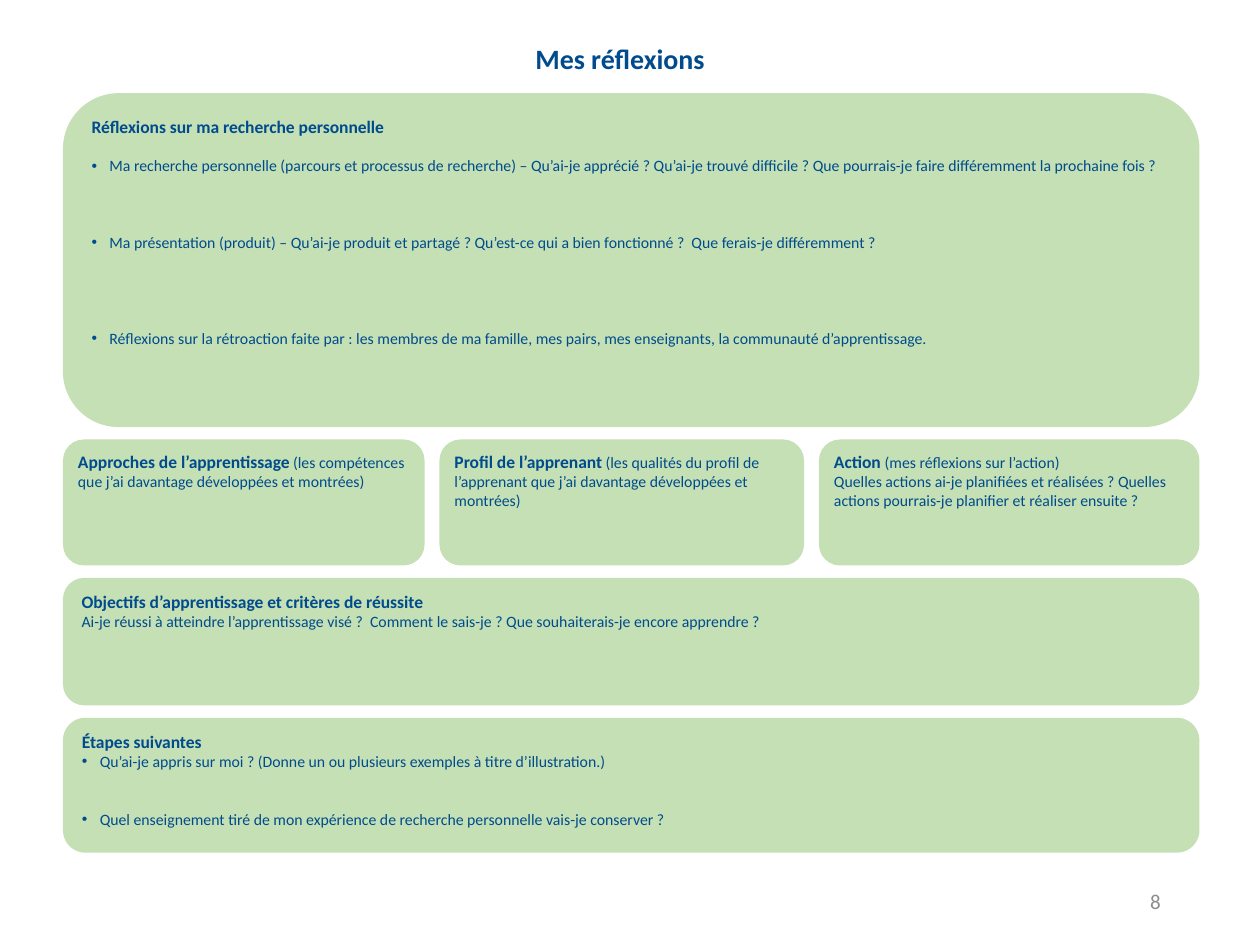
from lxml import etree
from pptx import Presentation
from pptx.dml.color import RGBColor
from pptx.enum.shapes import MSO_SHAPE
from pptx.enum.text import MSO_ANCHOR, PP_ALIGN
from pptx.oxml.ns import qn
from pptx.util import Cm, Pt

LEFT, CENTER, RIGHT, JUSTIFY = (
    PP_ALIGN.LEFT, PP_ALIGN.CENTER, PP_ALIGN.RIGHT, PP_ALIGN.JUSTIFY)
TOP, MIDDLE = MSO_ANCHOR.TOP, MSO_ANCHOR.MIDDLE
ROUNDED = MSO_SHAPE.ROUNDED_RECTANGLE
TITLE_ONLY = 5

THEME = {
    "font": "Calibri",
    "ink": RGBColor(0x00, 0x4B, 0x8D),
    "panel": RGBColor(0xC5, 0xE0, 0xB4),
    "number": RGBColor(0x8C, 0x8C, 0x8C),
    "title": 16, "page": 12, "heading": 10, "body": 9,
    "answer_line": 11,  # height in points of one line left free for answers
}

# Content: a paragraph is (heading, body, bulleted, free lines above it)
TITLE = "Mes réflexions"
PAGE_NUMBER = "8"
RESEARCH = [
    ("Réflexions sur ma recherche personnelle", "", False, 0),
    ("", "Ma recherche personnelle (parcours et processus de recherche) – Qu’ai-je apprécié ? "
         "Qu’ai-je trouvé difficile ? Que pourrais-je faire différemment la prochaine fois ?", True, 1),
    ("", "Ma présentation (produit) – Qu’ai-je produit et partagé ? "
         "Qu’est-ce qui a bien fonctionné ?  Que ferais-je différemment ?", True, 3),
    ("", "Réflexions sur la rétroaction faite par : les membres de ma famille, mes pairs, "
         "mes enseignants, la communauté d’apprentissage.", True, 4),
]
APPROACHES = [
    ("Approches de l’apprentissage",
     " (les compétences que j’ai davantage développées et montrées)", False, 0),
]
PROFILE = [
    ("Profil de l’apprenant",
     " (les qualités du profil de l’apprenant que j’ai davantage développées et montrées)", False, 0),
]
ACTION = [
    ("Action ", "(mes réflexions sur l’action)", False, 0),
    ("", "Quelles actions ai-je planifiées et réalisées ? "
         "Quelles actions pourrais-je planifier et réaliser ensuite ?", False, 0),
]
GOALS = [
    ("Objectifs d’apprentissage et critères de réussite", "", False, 0),
    ("", "Ai-je réussi à atteindre l’apprentissage visé ?  Comment le sais-je ? "
         "Que souhaiterais-je encore apprendre ?", False, 0),
]
NEXT_STEPS = [
    ("Étapes suivantes", "", False, 0),
    ("", "Qu’ai-je appris sur moi ? (Donne un ou plusieurs exemples à titre d’illustration.)", True, 0),
    ("", "Quel enseignement tiré de mon expérience de recherche personnelle vais-je conserver ?", True, 2),
]

# Layout in centimetres: each row is (height, alignment, insets, [(width, content)])
MARGIN_LEFT, FIRST_TOP = 1.27, 1.88
ROW_GAP, COLUMN_GAP = 0.25, 0.3
FULL_WIDTH = 22.91
WIDE_INSETS, CARD_INSETS = (0.25, 0.13), (0.18, 0.1)
BULLET_INDENT = 0.36
ROWS = [
    (6.73, JUSTIFY, WIDE_INSETS, [(FULL_WIDTH, RESEARCH)]),
    (2.54, LEFT, CARD_INSETS, [(7.29, APPROACHES), (7.35, PROFILE), (7.67, ACTION)]),
    (2.57, LEFT, WIDE_INSETS, [(FULL_WIDTH, GOALS)]),
    (2.72, LEFT, WIDE_INSETS, [(FULL_WIDTH, NEXT_STEPS)]),
]


def add_bullet(paragraph):
    properties = paragraph._p.get_or_add_pPr()
    properties.set("marL", str(Cm(BULLET_INDENT)))
    properties.set("indent", str(-Cm(BULLET_INDENT)))
    etree.SubElement(properties, qn("a:buFont")).set("typeface", "Arial")
    etree.SubElement(properties, qn("a:buChar")).set("char", "•")


def write(frame, paragraphs, align=LEFT, anchor=TOP, insets=WIDE_INSETS,
          color=THEME["ink"], heading=THEME["heading"], body=THEME["body"]):
    frame.word_wrap = True
    frame.vertical_anchor = anchor
    frame.margin_left = frame.margin_right = Cm(insets[0])
    frame.margin_top = frame.margin_bottom = Cm(insets[1])
    for index, (bold_text, plain_text, bulleted, free_lines) in enumerate(paragraphs):
        paragraph = frame.add_paragraph() if index else frame.paragraphs[0]
        paragraph.alignment = align
        paragraph.space_before = Pt(free_lines * THEME["answer_line"])
        if bulleted:
            add_bullet(paragraph)
        for text, size, bold in ((bold_text, heading, True), (plain_text, body, False)):
            if text:
                run = paragraph.add_run()
                run.text = text
                run.font.name = THEME["font"]
                run.font.size = Pt(size)
                run.font.bold = bold
                run.font.color.rgb = color


def add_panel(slide, left, top, width, height):
    panel = slide.shapes.add_shape(ROUNDED, Cm(left), Cm(top), Cm(width), Cm(height))
    panel.shadow.inherit = False
    panel.fill.solid()
    panel.fill.fore_color.rgb = THEME["panel"]
    panel.line.fill.background()
    return panel


def main():
    deck = Presentation()
    deck.slide_width, deck.slide_height = Cm(25.4), Cm(19.05)
    slide = deck.slides.add_slide(deck.slide_layouts[TITLE_ONLY])

    # Title
    title = slide.shapes.title
    title.left, title.top, title.width, title.height = Cm(0), Cm(0.71), Cm(25), Cm(0.94)
    write(title.text_frame, [(TITLE, "", False, 0)], align=CENTER, heading=THEME["title"])

    # Reflection panels
    top = FIRST_TOP
    for height, align, insets, panels in ROWS:
        left = MARGIN_LEFT
        for width, content in panels:
            panel = add_panel(slide, left, top, width, height)
            write(panel.text_frame, content, align=align, insets=insets)
            left += width + COLUMN_GAP
        top += height + ROW_GAP

    # Page number
    page = slide.shapes.add_textbox(Cm(17.93), Cm(17.65), Cm(5.72), Cm(1.02))
    write(page.text_frame, [("", PAGE_NUMBER, False, 0)], align=RIGHT, anchor=MIDDLE,
          color=THEME["number"], body=THEME["page"])

    deck.save("out.pptx")


if __name__ == "__main__":
    main()
